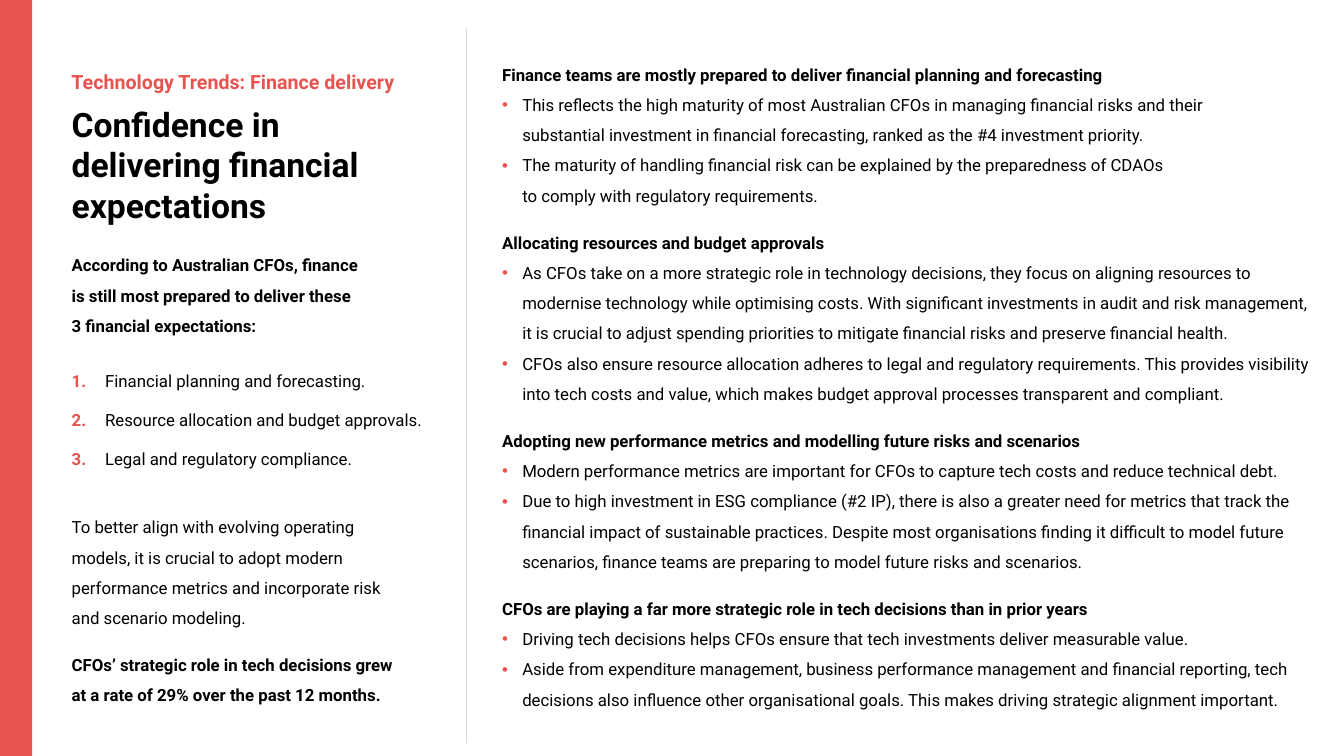
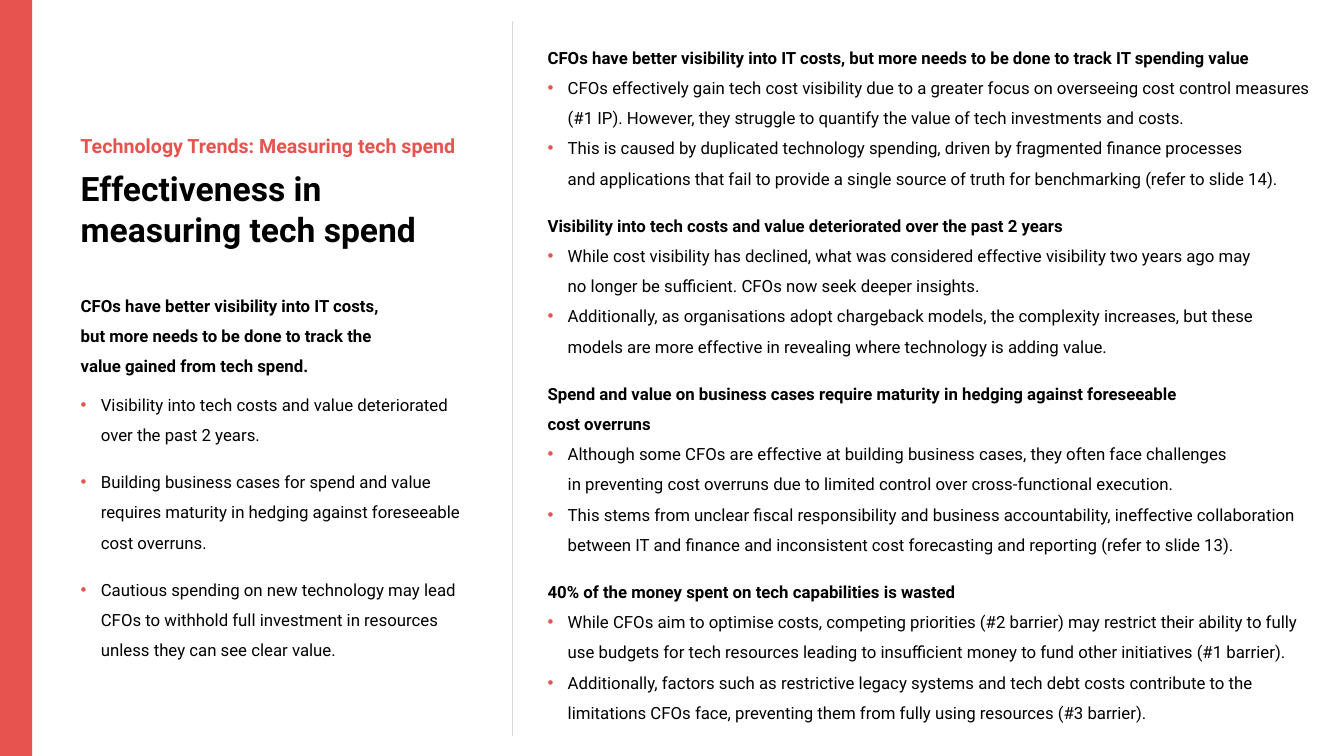
from dataclasses import dataclass

from lxml.etree import SubElement
from pptx import Presentation
from pptx.dml.color import RGBColor as Rgb
from pptx.enum.shapes import MSO_CONNECTOR as Link, MSO_SHAPE as Shape
from pptx.enum.text import MSO_ANCHOR as Anchor, MSO_AUTO_SIZE as Fit, PP_ALIGN as Align
from pptx.oxml.ns import qn
from pptx.util import Inches, Pt


# Theme: colours, type sizes and spacing
@dataclass(frozen=True)
class Theme:
    font: str = "Roboto"
    red: str = "E7534F"
    ink: str = "000000"
    rule: str = "D9D9D9"
    title: int = 24
    kicker: int = 14
    text: int = 12
    lead: float = 1.5
    line: float = 21.5  # height of one line of body text
    dot: float = 0.2
    num: float = 0.29


T = Theme()
W, H = Inches(13.33), Inches(7.5)


# Grid: 100 columns by 100 rows
def col(n):
    return round(W * n / 100)


def row(n):
    return round(H * n / 100)


@dataclass(frozen=True)
class Plan:
    left: float    # left edge of the side panel
    top: float     # top of the kicker
    title: float   # height of the title
    side: tuple    # top and height of the side text
    rule: tuple    # column and top of the divider
    main: tuple    # top, width and height of the main text


@dataclass(frozen=True)
class Para:
    text: str
    bold: bool = False
    mark: str = ""  # "dot", "num" or none
    after: float = 0
    before: float = 0


# Text parts
def frame(shape, x, y, w, h):
    shape.left, shape.top, shape.width, shape.height = col(x), row(y), col(w), row(h)
    box = shape.text_frame
    box.word_wrap = True
    box.auto_size = Fit.NONE
    box.vertical_anchor = Anchor.TOP
    return box


def style(para, size, color, bold):
    para.alignment = Align.LEFT
    font = para.font
    font.name, font.size, font.bold = T.font, Pt(size), bold
    font.color.rgb = Rgb.from_string(color)


def bullet(para, mark):
    props = para._p.get_or_add_pPr()
    step = Inches({"dot": T.dot, "num": T.num}.get(mark, 0))
    props.set("marL", str(step))
    props.set("indent", str(-step))
    if not mark:
        SubElement(props, qn("a:buNone"))
        return
    SubElement(SubElement(props, qn("a:buClr")), qn("a:srgbClr"), val=T.red)
    if mark == "num":
        SubElement(props, qn("a:buFont"), typeface=T.font)
        SubElement(props, qn("a:buAutoNum"), type="arabicPeriod")
    else:
        SubElement(props, qn("a:buFont"), typeface="Arial")
        SubElement(props, qn("a:buChar"), char="•")


def label(box, text, size, color):
    para = box.paragraphs[0]
    para.text = text
    style(para, size, color, True)


def fill(box, items):
    for i, item in enumerate(items):
        para = box.add_paragraph() if i else box.paragraphs[0]
        bullet(para, item.mark)
        if item.mark == "num":
            # The bold first run makes the number bold
            lead = para.add_run()
            lead.text, lead.font.bold = " ", True
            para.add_run().text = item.text
        else:
            para.text = item.text
        para.line_spacing = T.lead
        para.space_before, para.space_after = Pt(item.before), Pt(item.after)
        style(para, T.text, T.ink, item.bold)


def spread(parts):
    """Turn headings with their points into paragraphs."""
    for head, *points in parts:
        yield Para(head, bold=True)
        for point in points:
            yield Para(point, mark="dot", after=12 if point is points[-1] else 0)


# Shared decoration
def band(slide):
    bar = slide.shapes.add_shape(Shape.RECTANGLE, 0, 0, col(2.4), H)
    bar.shadow.inherit = False
    bar.fill.solid()
    bar.fill.fore_color.rgb = Rgb.from_string(T.red)
    bar.line.fill.background()


def divider(slide, x, y):
    line = slide.shapes.add_connector(Link.STRAIGHT, col(x), row(y), col(x), row(y + 94.5))
    line.line.color.rgb = Rgb.from_string(T.rule)
    line.line.width = Pt(0.5)
    SubElement(line._element.spPr, qn("a:effectLst"))


def build(deck, plan, kicker, title, side, main):
    slide = deck.slides.add_slide(deck.slide_layouts[3])
    holds = slide.placeholders
    wide, tall = 30.9, 4.53
    band(slide)
    box = slide.shapes.add_textbox(0, 0, 0, 0)
    label(frame(box, plan.left, plan.top, 33.9, tall), kicker, T.kicker, T.red)
    label(frame(holds[0], plan.left, plan.top + tall, wide, plan.title), title, T.title, T.ink)
    y, h = plan.side
    fill(frame(holds[1], plan.left, y, wide, h), side)
    divider(slide, *plan.rule)
    y, w, h = plan.main
    fill(frame(holds[2], plan.rule[0] + 1.88, y, w, h), spread(main))


# Content: confidence slide
TRUST = Plan(4.58, 8.53, 17.5, (31.73, 62.3), (34.73, 3.73), (6.53, 62.2, 88.4))
TRUST_SIDE = [
    Para("According to Australian CFOs, finance \nis still most prepared to deliver these \n"
         "3 financial expectations:", bold=True, after=18),
    *(Para(text, mark="num", after=6) for text in (
        "Financial planning and forecasting.",
        "Resource allocation and budget approvals.",
        "Legal and regulatory compliance.")),
    Para("To better align with evolving operating \nmodels, it is crucial to adopt modern \n"
         "performance metrics and incorporate risk \nand scenario modeling.",
         before=T.line, after=12),
    Para("CFOs’ strategic role in tech decisions grew \n"
         "at a rate of 29% over the past 12 months.", bold=True, after=6),
]
TRUST_MAIN = [
    ("Finance teams are mostly prepared to deliver financial planning and forecasting",
     "This reflects the high maturity of most Australian CFOs in managing financial risks "
     "and their \nsubstantial investment in financial forecasting, ranked as the #4 "
     "investment priority.",
     "The maturity of handling financial risk can be explained by the preparedness of CDAOs \n"
     "to comply with regulatory requirements."),
    ("Allocating resources and budget approvals",
     "As CFOs take on a more strategic role in technology decisions, they focus on aligning "
     "resources to modernise technology while optimising costs. With significant investments "
     "in audit and risk management, it is crucial to adjust spending priorities to mitigate "
     "financial risks and preserve financial health.",
     "CFOs also ensure resource allocation adheres to legal and regulatory requirements. This "
     "provides visibility into tech costs and value, which makes budget approval processes "
     "transparent and compliant."),
    ("Adopting new performance metrics and modelling future risks and scenarios",
     "Modern performance metrics are important for CFOs to capture tech costs and reduce "
     "technical debt.",
     "Due to high investment in ESG compliance (#2 IP), there is also a greater need for "
     "metrics that track the financial impact of sustainable practices. Despite most "
     "organisations finding it difficult to model future scenarios, finance teams are "
     "preparing to model future risks and scenarios."),
    ("CFOs are playing a far more strategic role in tech decisions than in prior years",
     "Driving tech decisions helps CFOs ensure that tech investments deliver measurable value.",
     "Aside from expenditure management, business performance management and financial "
     "reporting, tech decisions also influence other organisational goals. This makes driving "
     "strategic alignment important."),
]

# Content: tech spend slide
SPEND = Plan(5.25, 17.07, 12.13, (37.07, 50.9), (38.11, 2.8), (4.27, 58.4, 92.4))
SPEND_SIDE = [
    Para("CFOs have better visibility into IT costs, \nbut more needs to be done to track the \n"
         "value gained from tech spend.", bold=True, after=6),
    *(Para(text, mark="dot", after=12) for text in (
        "Visibility into tech costs and value deteriorated over the past 2 years.",
        "Building business cases for spend and value requires maturity in hedging against "
        "foreseeable cost overruns.",
        "Cautious spending on new technology may lead CFOs to withhold full investment in "
        "resources unless they can see clear value.")),
]
SPEND_MAIN = [
    ("CFOs have better visibility into IT costs, but more needs to be done to track IT "
     "spending value",
     "CFOs effectively gain tech cost visibility due to a greater focus on overseeing cost "
     "control measures (#1 IP). However, they struggle to quantify the value of tech "
     "investments and costs.",
     "This is caused by duplicated technology spending, driven by fragmented finance "
     "processes \nand applications that fail to provide a single source of truth for "
     "benchmarking (refer to slide 14)."),
    ("Visibility into tech costs and value deteriorated over the past 2 years",
     "While cost visibility has declined, what was considered effective visibility two years "
     "ago may \nno longer be sufficient. CFOs now seek deeper insights.",
     "Additionally, as organisations adopt chargeback models, the complexity increases, but "
     "these models are more effective in revealing where technology is adding value."),
    ("Spend and value on business cases require maturity in hedging against foreseeable \n"
     "cost overruns",
     "Although some CFOs are effective at building business cases, they often face challenges "
     "\nin preventing cost overruns due to limited control over cross-functional execution.",
     "This stems from unclear fiscal responsibility and business accountability, ineffective "
     "collaboration between IT and finance and inconsistent cost forecasting and reporting "
     "(refer to slide 13)."),
    ("40% of the money spent on tech capabilities is wasted",
     "While CFOs aim to optimise costs, competing priorities (#2 barrier) may restrict their "
     "ability to fully use budgets for tech resources leading to insufficient money to fund "
     "other initiatives (#1 barrier).",
     "Additionally, factors such as restrictive legacy systems and tech debt costs contribute "
     "to the limitations CFOs face, preventing them from fully using resources (#3 barrier)."),
]


def main():
    deck = Presentation()
    deck.slide_width, deck.slide_height = W, H
    build(deck, TRUST, "Technology Trends: Finance delivery",
          "Confidence in \ndelivering financial expectations", TRUST_SIDE, TRUST_MAIN)
    build(deck, SPEND, "Technology Trends: Measuring tech spend",
          "Effectiveness in measuring tech spend", SPEND_SIDE, SPEND_MAIN)
    deck.save("out.pptx")


if __name__ == "__main__":
    main()
